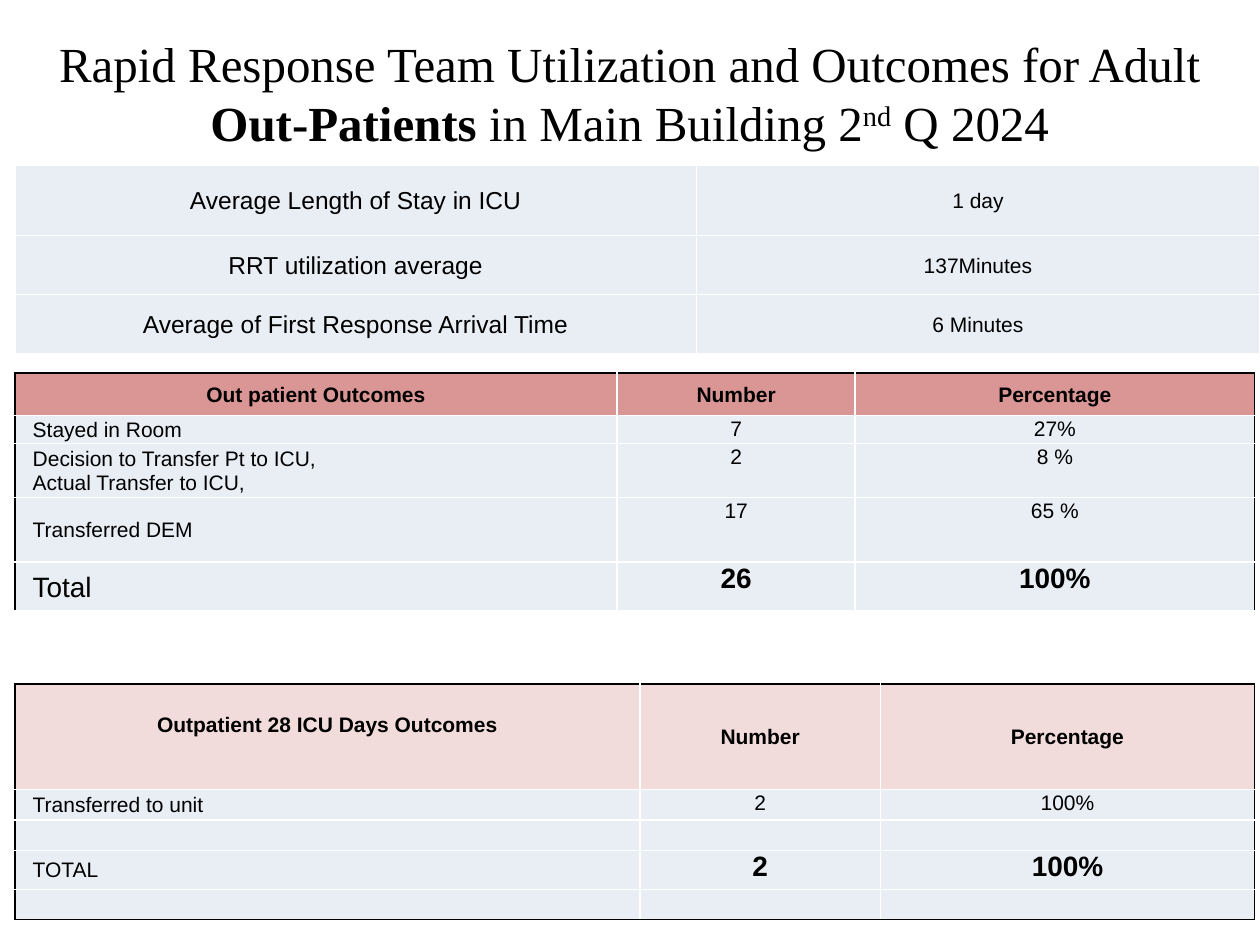
from dataclasses import dataclass
from lxml.etree import SubElement
from pptx import Presentation
from pptx.dml.color import RGBColor
from pptx.enum.text import MSO_ANCHOR, PP_ALIGN
from pptx.oxml.ns import qn
from pptx.util import Cm, Pt


@dataclass
class Theme:
    ink: str = "000000"
    line: str = "FFFFFF"
    body: str = "E9EDF4"
    rose: str = "D99694"
    pale: str = "F2DCDB"
    serif: str = "Times New Roman"
    sans: str = "Arial"
    title: int = 28
    big: int = 16
    mid: int = 14
    small: int = 12


look = Theme()


def write(para, text, size, bold=False, face=look.sans):
    run = para.add_run()
    run.text = text
    font = run.font
    font.name, font.size, font.bold = face, Pt(size), bold
    font.color.rgb = RGBColor.from_string(look.ink)
    return run


def edge(cell, side, color):
    line = SubElement(cell._tc.get_or_add_tcPr(), qn(f"a:ln{side}"), w=str(Pt(1)))
    fill = SubElement(line, qn("a:solidFill"))
    SubElement(fill, qn("a:srgbClr"), val=color)


deck = Presentation()
deck.slide_width, deck.slide_height = Cm(25.4), Cm(19.05)
slide = deck.slides.add_slide(deck.slide_layouts[6])

frame = slide.shapes.add_textbox(Cm(0.3), Cm(0), Cm(24.79), Cm(3.73)).text_frame
frame.word_wrap = True
frame.vertical_anchor = MSO_ANCHOR.MIDDLE
para = frame.paragraphs[0]
para.alignment = PP_ALIGN.CENTER
for text, bold, lift in [
    ("Rapid Response Team Utilization and Outcomes for Adult ", False, 0),
    ("Out-Patients", True, 0),
    (" in Main Building 2", False, 0),
    ("nd", False, 30000),
    (" Q 2024", False, 0),
]:
    run = write(para, text, look.title, bold, look.serif)
    if lift:
        run._r.get_or_add_rPr().set("baseline", str(lift))

small, mid, big = look.small, look.mid, look.big
days = [
    (2.13, ["Outpatient 28 ICU Days Outcomes", "Number", "Percentage"], small, small),
    (0.61, ["Transferred to unit", "2", "100%"], small, small),
    (0.61, ["", "", ""], small, small),
    (0.79, ["TOTAL", "2", "100%"], small, big),
    (0.61, ["", "", ""], small, small),
]
times = [
    (1.42, ["Average Length of Stay in ICU", "1 day"], mid, small),
    (1.19, ["RRT utilization average", "137Minutes"], mid, small),
    (1.19, ["Average of First Response Arrival Time", "6 Minutes"], mid, small),
]
stays = [
    (0.86, ["Out patient Outcomes", "Number", "Percentage"], small, small),
    (0.56, ["Stayed in Room", "7", "27%"], small, small),
    (1.09, ["Decision to Transfer Pt to ICU,\nActual Transfer to ICU,", "2", "8 %"], small, small),
    (1.3, ["Transferred DEM", "17", "65 %"], small, small),
    (0.99, ["Total", "26", "100%"], big, big),
]

for top, cols, rows, head, base in [
    (13.79, [12.6, 4.85, 7.54], days, look.pale, look.ink),
    (3.33, [13.74, 11.35], times, None, look.line),
    (7.52, [12.14, 4.8, 8.05], stays, look.rose, look.line),
]:
    high = sum(row[0] for row in rows)
    grid = slide.shapes.add_table(
        len(rows), len(cols), Cm(0.3), Cm(top), Cm(sum(cols)), Cm(high)
    ).table
    grid.first_row = grid.horz_banding = False
    rim = look.ink if head else look.line
    for col, wide in zip(grid.columns, cols):
        col.width = Cm(wide)
    for i, (tall, texts, first, rest) in enumerate(rows):
        grid.rows[i].height = Cm(tall)
        crown = bool(head) and i == 0
        for j, text in enumerate(texts):
            cell = grid.cell(i, j)
            edge(cell, "L", rim if j == 0 else look.line)
            edge(cell, "R", rim if j == len(cols) - 1 else look.line)
            edge(cell, "T", rim if i == 0 else look.line)
            edge(cell, "B", base if i == len(rows) - 1 else look.line)
            cell.fill.solid()
            cell.fill.fore_color.rgb = RGBColor.from_string(head if crown else look.body)
            cell.margin_left = cell.margin_right = cell.margin_top = Cm(0.03)
            cell.margin_bottom = Cm(0.5 if crown and j == 0 and rows is days else 0)
            label = bool(head) and j == 0 and not crown
            fixed = crown or label or not head
            cell.vertical_anchor = MSO_ANCHOR.MIDDLE if fixed else MSO_ANCHOR.TOP
            size = first if j == 0 else rest
            for k, part in enumerate(text.split("\n")):
                para = cell.text_frame.paragraphs[0] if k == 0 else cell.text_frame.add_paragraph()
                para.alignment = PP_ALIGN.LEFT if label else PP_ALIGN.CENTER
                if label:
                    para._p.get_or_add_pPr().set("marL", str(Cm(0.33)))
                if part:
                    write(para, part, size, crown or (j > 0 and size == big))
                else:
                    SubElement(para._p, qn("a:endParaRPr"), sz=str(size * 100))

deck.save("out.pptx")
